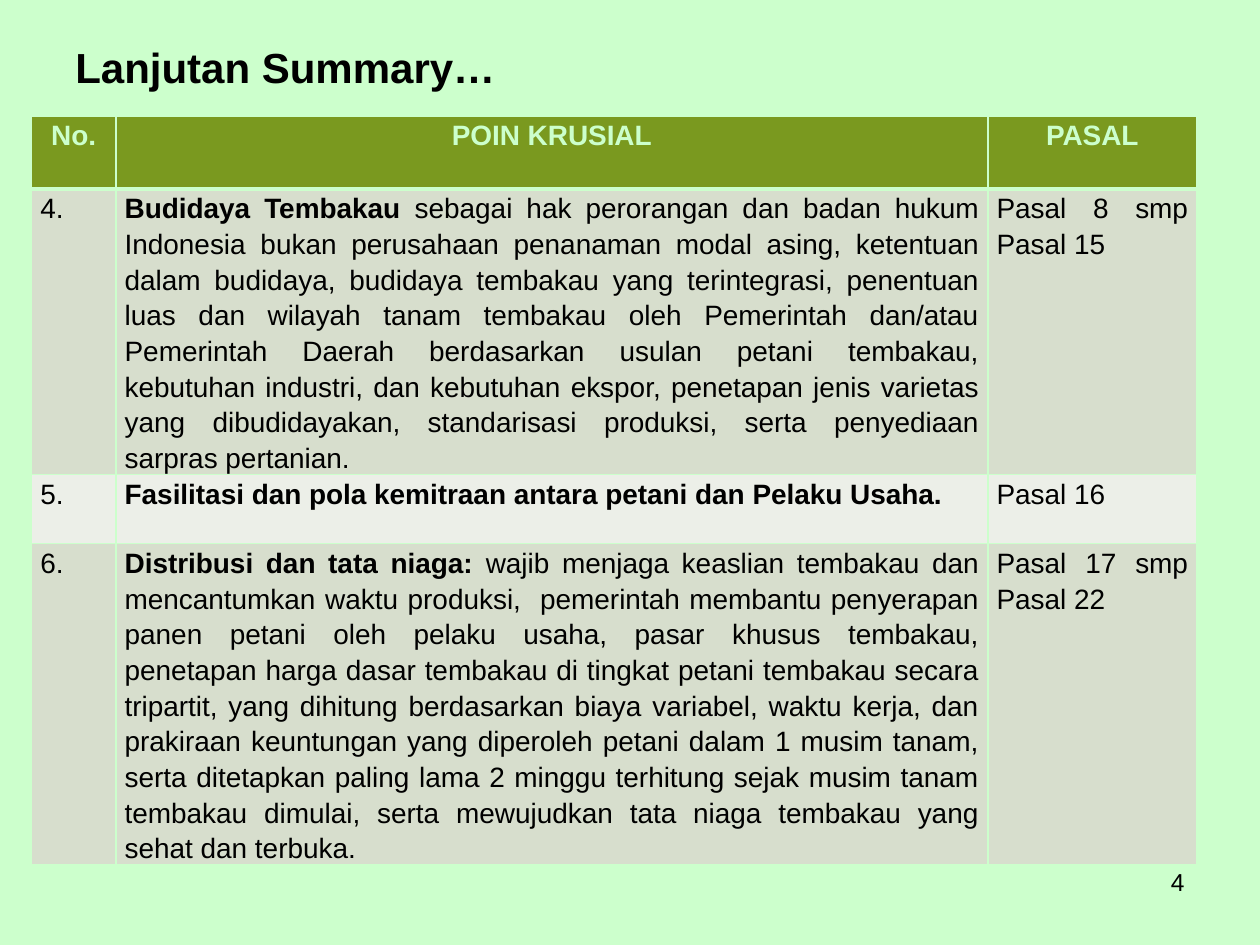
from dataclasses import dataclass

from lxml import etree
from pptx import Presentation
from pptx import util as u
from pptx.dml.color import RGBColor
from pptx.enum import text
from pptx.oxml.ns import qn


@dataclass(frozen=True)
class Theme:
    font: str = "Arial"
    background: str = "CCFFCC"
    ink: str = "000000"
    header: str = "7A991F"
    bands: tuple = ("D7DECD", "ECEFE8")
    title_size: int = 24
    table_size: int = 16
    table_leading: float = 20.4
    number_size: int = 14


LEFT, CENTER, RIGHT, JUSTIFY = (
    text.PP_ALIGN.LEFT, text.PP_ALIGN.CENTER,
    text.PP_ALIGN.RIGHT, text.PP_ALIGN.JUSTIFY,
)

COLUMN_WIDTHS = (0.67, 6.92, 1.66)
ROW_HEIGHTS = (0.58, 1.57, 0.55, 2.42)
HEADINGS = ("No.", "POIN KRUSIAL", "PASAL")
POINTS = (
    ("4.", "Budidaya Tembakau ",
     "sebagai hak perorangan dan badan hukum Indonesia bukan perusahaan "
     "penanaman modal asing, ketentuan dalam budidaya, budidaya tembakau yang "
     "terintegrasi, penentuan luas dan wilayah tanam tembakau oleh Pemerintah "
     "dan/atau Pemerintah Daerah berdasarkan usulan petani tembakau, kebutuhan "
     "industri, dan kebutuhan ekspor, penetapan jenis varietas yang "
     "dibudidayakan, standarisasi produksi, serta penyediaan sarpras pertanian.",
     "Pasal 8 smp Pasal 15"),
    ("5.", "Fasilitasi dan pola kemitraan antara petani dan Pelaku Usaha.", "",
     "Pasal 16"),
    ("6.", "Distribusi dan tata niaga: ",
     "wajib menjaga keaslian tembakau dan mencantumkan waktu produksi,  "
     "pemerintah membantu penyerapan panen petani oleh pelaku usaha, pasar "
     "khusus tembakau, penetapan harga dasar tembakau di tingkat petani tembakau "
     "secara tripartit, yang dihitung berdasarkan biaya variabel, waktu kerja, "
     "dan prakiraan keuntungan yang diperoleh petani dalam 1 musim tanam, serta "
     "ditetapkan paling lama 2 minggu terhitung sejak musim tanam tembakau "
     "dimulai, serta mewujudkan tata niaga tembakau yang sehat dan terbuka.",
     "Pasal 17 smp Pasal 22"),
)


def add_run(paragraph, content, *, font, size, color, bold=False):
    run = paragraph.add_run()
    run.text = content
    run.font.name = font
    run.font.size = u.Pt(size)
    run.font.bold = bold
    run.font.color.rgb = RGBColor.from_string(color)


class SlideBuilder:
    def __init__(self, slide, theme):
        self.slide = slide
        self.theme = theme

    def background(self):
        fill = self.slide.background.fill
        fill.solid()
        fill.fore_color.rgb = RGBColor.from_string(self.theme.background)

    def text_box(self, content, box, size, align=LEFT,
                 anchor=text.MSO_ANCHOR.TOP, bold=False):
        shape = self.slide.shapes.add_textbox(*map(u.Inches, box))
        frame = shape.text_frame
        frame.word_wrap = True
        frame.vertical_anchor = anchor
        paragraph = frame.paragraphs[0]
        paragraph.alignment = align
        add_run(paragraph, content, font=self.theme.font, size=size,
                color=self.theme.ink, bold=bold)

    def table(self, left, top, widths, heights):
        shape = self.slide.shapes.add_table(
            len(heights), len(widths), u.Inches(left), u.Inches(top),
            u.Inches(sum(widths)), u.Inches(sum(heights)))
        table = shape.table
        for column, width in zip(table.columns, widths):
            column.width = u.Inches(width)
        for row, height in zip(table.rows, heights):
            row.height = u.Inches(height)
        return table

    def borders(self, cell, bottom):
        properties = cell._tc.get_or_add_tcPr()
        for side, points in (("L", 1), ("R", 1), ("T", 1), ("B", bottom)):
            line = etree.SubElement(properties, qn(f"a:ln{side}"),
                                    w=str(u.Pt(points)))
            fill = etree.SubElement(line, qn("a:solidFill"))
            etree.SubElement(fill, qn("a:srgbClr"), val=self.theme.background)

    def cell(self, cell, runs, fill, align, color, bottom=1):
        cell.margin_left = cell.margin_right = u.Inches(0.07)
        cell.margin_top = cell.margin_bottom = 0
        self.borders(cell, bottom)
        cell.fill.solid()
        cell.fill.fore_color.rgb = RGBColor.from_string(fill)
        paragraph = cell.text_frame.paragraphs[0]
        paragraph.alignment = align
        paragraph.line_spacing = u.Pt(self.theme.table_leading)
        for content, bold in runs:
            if content:
                add_run(paragraph, content, font=self.theme.font,
                        size=self.theme.table_size, color=color, bold=bold)


def main():
    theme = Theme()
    presentation = Presentation()
    presentation.slide_width = u.Inches(10)
    presentation.slide_height = u.Inches(7.5)
    slide = presentation.slides.add_slide(presentation.slide_layouts[6])
    builder = SlideBuilder(slide, theme)

    builder.background()
    builder.text_box("Lanjutan Summary…", (0.5, 0.08, 9, 0.7),
                     theme.title_size, anchor=text.MSO_ANCHOR.BOTTOM, bold=True)

    table = builder.table(0.25, 0.92, COLUMN_WIDTHS, ROW_HEIGHTS)
    for column, heading in enumerate(HEADINGS):
        builder.cell(table.cell(0, column), [(heading, True)], theme.header,
                     CENTER, theme.background, bottom=3)
    for row, (number, lead, detail, article) in enumerate(POINTS, start=1):
        fill = theme.bands[(row - 1) % 2]
        contents = (
            ([(number, False)], LEFT),
            ([(lead, True), (detail, False)], JUSTIFY),
            ([(article, False)], JUSTIFY),
        )
        for column, (runs, align) in enumerate(contents):
            builder.cell(table.cell(row, column), runs, fill, align, theme.ink)

    builder.text_box("4", (7.17, 6.83, 2.33, 0.52), theme.number_size, RIGHT)

    presentation.save("out.pptx")


if __name__ == "__main__":
    main()
